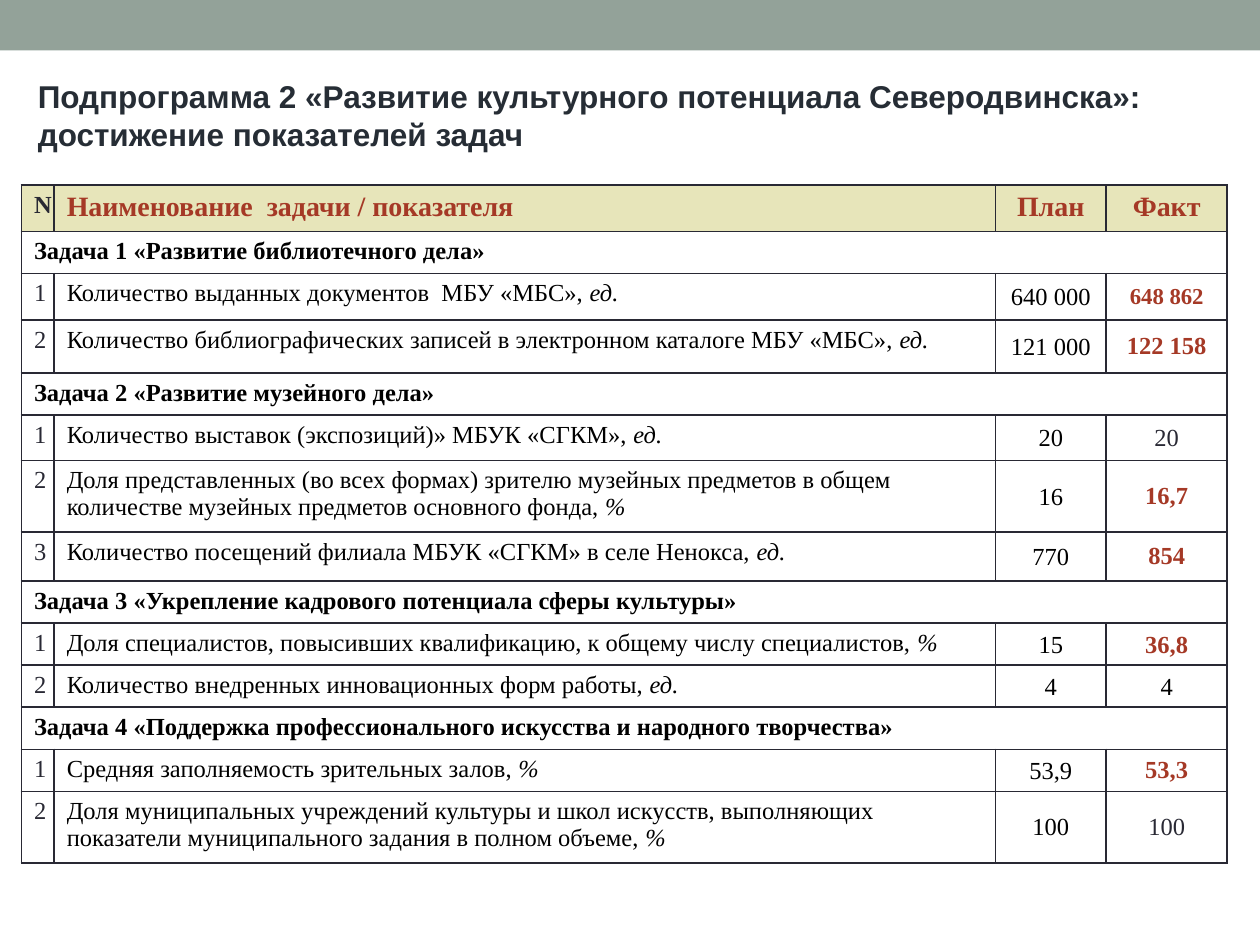
from lxml.etree import SubElement
from pptx import Presentation
from pptx.dml.color import RGBColor
from pptx.enum.shapes import MSO_SHAPE
from pptx.enum.text import MSO_ANCHOR, MSO_AUTO_SIZE, PP_ALIGN
from pptx.oxml.ns import qn
from pptx.util import Inches, Pt

BAR, HEADER_FILL = "93A299", "E7E5BA"
DARK, ACCENT, BLACK, TITLE_COLOR = "292934", "A53926", "000000", "262D35"
TITLE = ("Подпрограмма 2 «Развитие культурного потенциала Северодвинска»: "
         "достижение показателей задач")

# Task name, then its indicators: name, unit, plan, fact
TASKS = [
    ("Задача 1 «Развитие библиотечного дела»", [
        ("Количество выданных документов  МБУ «МБС», ", "ед.", "640 000", "648 862"),
        ("Количество библиографических записей в электронном каталоге МБУ «МБС», ",
         "ед.", "121 000", "122 158"),
    ]),
    ("Задача 2 «Развитие музейного дела»", [
        ("Количество выставок (экспозиций)» МБУК «СГКМ», ", "ед.", "20", "20"),
        ("Доля представленных (во всех формах) зрителю музейных предметов в общем "
         "количестве музейных предметов основного фонда, ", "%", "16", "16,7"),
        ("Количество посещений филиала МБУК «СГКМ» в селе Ненокса, ",
         "ед.", "770", "854"),
    ]),
    ("Задача 3 «Укрепление кадрового потенциала сферы культуры»", [
        ("Доля специалистов, повысивших квалификацию, к общему числу специалистов, ",
         "%", "15", "36,8"),
        ("Количество внедренных инновационных форм работы, ", "ед.", "4", "4"),
    ]),
    ("Задача 4 «Поддержка профессионального искусства и народного творчества»", [
        ("Средняя заполняемость зрительных залов, ", "%", "53,9", "53,3"),
        ("Доля муниципальных учреждений культуры и школ искусств, выполняющих "
         "показатели муниципального задания в полном объеме, ", "%", "100", "100"),
    ]),
]
COLUMN_WIDTHS = [0.26, 7.47, 0.88, 0.96]
ROW_HEIGHTS = [0.31, 0.31, 0.37, 0.42, 0.31, 0.36, 0.52,
               0.39, 0.31, 0.3, 0.3, 0.31, 0.3, 0.52]
FACT_EXCEPTIONS = {"648 862": {"size": 13}, "4": {"color": BLACK}}
TIGHT_FACTS = {"36,8", "4"}


def rgb(value):
    return RGBColor.from_string(value)


def add_run(paragraph, text, font="Times New Roman", size=14, color=BLACK,
            bold=False, italic=False):
    run = paragraph.add_run()
    run.text = text
    run.font.name = font
    run.font.size = Pt(size)
    run.font.color.rgb = rgb(color)
    run.font.bold = bold
    run.font.italic = italic


class ReportSlide:
    def __init__(self, presentation):
        self.slide = presentation.slides.add_slide(presentation.slide_layouts[5])

    def bar(self, left, top, width, height):
        bar = self.slide.shapes.add_shape(
            MSO_SHAPE.RECTANGLE, Inches(left), Inches(top), Inches(width), Inches(height))
        bar.fill.solid()
        bar.fill.fore_color.rgb = rgb(BAR)
        bar.line.fill.background()
        bar.shadow.inherit = False

    def title(self, text, left, top, width, height):
        title = self.slide.shapes.title
        title.left, title.top = Inches(left), Inches(top)
        title.width, title.height = Inches(width), Inches(height)
        frame = title.text_frame
        frame.word_wrap = True
        frame.auto_size = MSO_AUTO_SIZE.SHAPE_TO_FIT_TEXT
        frame.vertical_anchor = MSO_ANCHOR.TOP
        frame.paragraphs[0].alignment = PP_ALIGN.LEFT
        add_run(frame.paragraphs[0], text, font="Arial", size=18,
                color=TITLE_COLOR, bold=True)

    def table(self, left, top, width, height):
        holder = self.slide.shapes.add_table(
            len(ROW_HEIGHTS), len(COLUMN_WIDTHS),
            Inches(left), Inches(top), Inches(width), Inches(height))
        table = holder.table
        table.horz_banding = False
        for column, column_width in zip(table.columns, COLUMN_WIDTHS):
            column.width = Inches(column_width)
        for row, row_height in zip(table.rows, ROW_HEIGHTS):
            row.height = Inches(row_height)
        holder.height = Inches(height)  # rows grow with their text
        for cell in table.iter_cells():
            self.borders(cell)
            cell.fill.background()
        return table

    def borders(self, cell):
        properties = cell._tc.get_or_add_tcPr()
        for side in ("lnL", "lnR", "lnT", "lnB"):
            line = SubElement(properties, qn(f"a:{side}"), w=str(Pt(1)))
            fill = SubElement(line, qn("a:solidFill"))
            SubElement(fill, qn("a:srgbClr"), val=DARK)

    def cell(self, cell, *runs, centered=False, middle=False, tight=False, fill=None):
        """Fill a cell with runs, each a pair of text and its format."""
        paragraph = cell.text_frame.paragraphs[0]
        if centered:
            paragraph.alignment = PP_ALIGN.CENTER
        if middle:
            cell.vertical_anchor = MSO_ANCHOR.MIDDLE
        if tight:
            cell.margin_left = cell.margin_right = cell.margin_top = Inches(0.01)
            cell.margin_bottom = 0
        if fill:
            cell.fill.solid()
            cell.fill.fore_color.rgb = rgb(fill)
        for text, style in runs:
            add_run(paragraph, text, **style)

    def header_row(self, table):
        heading = {"size": 16, "color": ACCENT, "bold": True}
        labels = [("N", {"color": DARK, "bold": True}),
                  ("Наименование  задачи / показателя", heading),
                  ("План", heading), ("Факт", heading)]
        for column, label in enumerate(labels):
            self.cell(table.cell(0, column), label, centered=column > 1, fill=HEADER_FILL)

    def task_row(self, table, row, task):
        table.cell(row, 0).merge(table.cell(row, len(COLUMN_WIDTHS) - 1))
        self.cell(table.cell(row, 0), (task, {"bold": True}))

    def indicator_row(self, table, row, number, indicator):
        name, unit, plan, fact = indicator
        changed = fact != plan
        fact_style = {"color": ACCENT if changed else DARK, "bold": changed}
        fact_style.update(FACT_EXCEPTIONS.get(fact, {}))
        self.cell(table.cell(row, 0), (str(number), {"color": DARK}))
        self.cell(table.cell(row, 1), (name, {}), (unit, {"italic": True}))
        self.cell(table.cell(row, 2), (plan, {}), centered=True, middle=True, tight=True)
        self.cell(table.cell(row, 3), (fact, fact_style), centered=True, middle=True,
                  tight=fact in TIGHT_FACTS)


def main():
    presentation = Presentation()
    presentation.slide_width, presentation.slide_height = Inches(10), Inches(7.5)
    report = ReportSlide(presentation)
    report.bar(0, 0, 10, 0.4)
    report.title(TITLE, 0.2, 0.56, 9.61, 0.71)
    table = report.table(0.17, 1.47, 9.57, 5.38)
    report.header_row(table)
    row = 1
    for task, indicators in TASKS:
        report.task_row(table, row, task)
        for number, indicator in enumerate(indicators, start=1):
            report.indicator_row(table, row + number, number, indicator)
        row += 1 + len(indicators)
    presentation.save("out.pptx")


if __name__ == "__main__":
    main()
